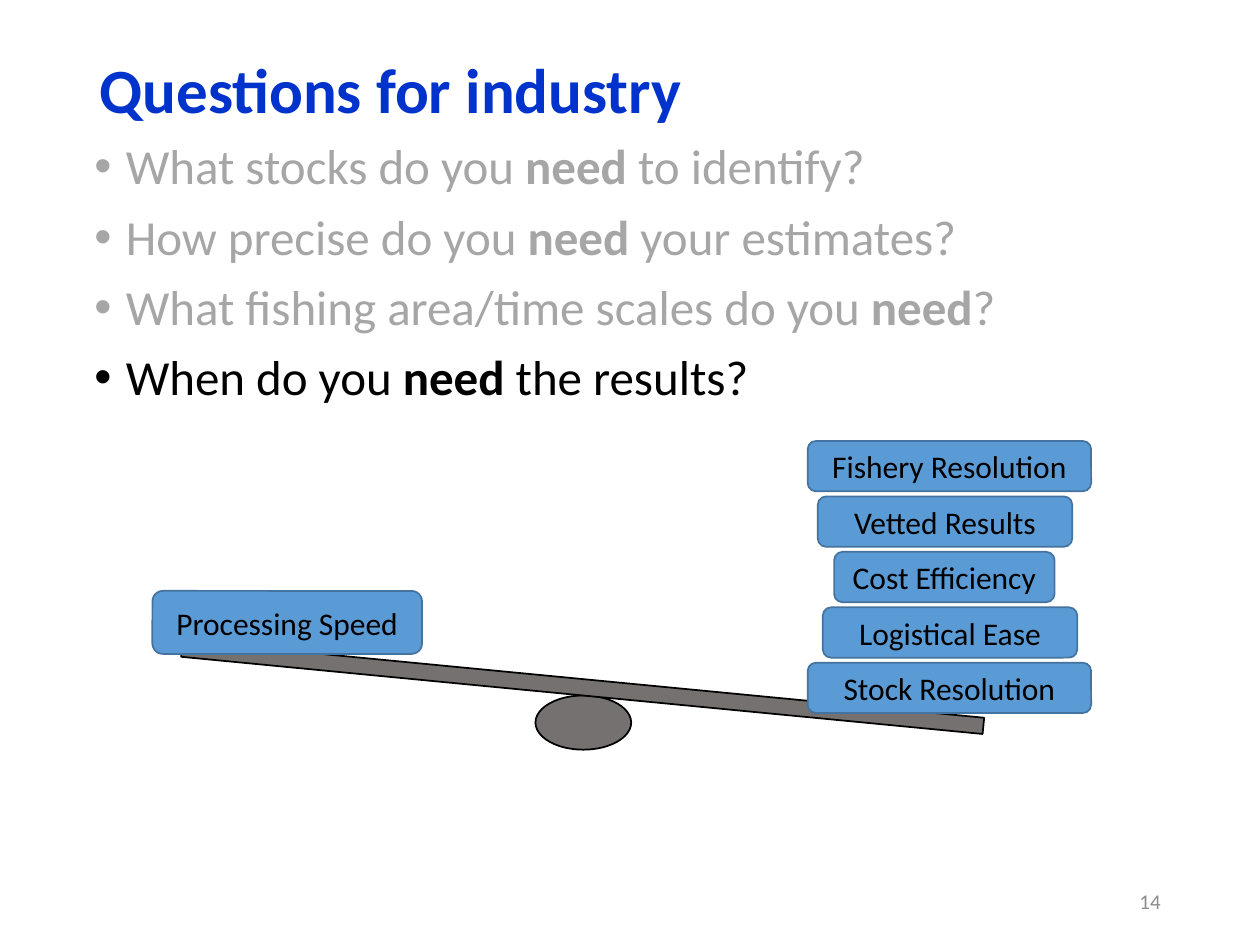
from lxml import etree
from pptx import Presentation
from pptx.dml.color import RGBColor
from pptx.enum.shapes import MSO_SHAPE
from pptx.enum.text import MSO_ANCHOR, PP_ALIGN
from pptx.oxml.ns import qn
from pptx.util import Inches, Pt

ROUNDED, OVAL, RECTANGLE = MSO_SHAPE.ROUNDED_RECTANGLE, MSO_SHAPE.OVAL, MSO_SHAPE.RECTANGLE
MIDDLE, TOP = MSO_ANCHOR.MIDDLE, MSO_ANCHOR.TOP
LEFT, CENTER, RIGHT = PP_ALIGN.LEFT, PP_ALIGN.CENTER, PP_ALIGN.RIGHT

FONT = "Calibri"
COLORS = {
    "title": "0033CC",
    "muted": "A6A6A6",
    "text": "000000",
    "number": "8C8C8C",
    "scale": "767171",
    "weight": "5B9BD5",
    "weight_line": "43739E",
}
QUESTIONS = [
    ("What stocks do you ", "need", " to identify?", "muted"),
    ("How precise do you ", "need ", "your estimates?", "muted"),
    ("What fishing area/time scales do you ", "need", "?", "muted"),
    ("When do you ", "need", " the results?", "text"),
]
STACK = [
    ("Fishery Resolution", 0, 2.25),
    ("Vetted Results", 0.08, 2.02),
    ("Cost Efficiency", 0.21, 1.75),
    ("Logistical Ease", 0.12, 2.02),
    ("Stock Resolution", 0, 2.25),
]


def color(name):
    return RGBColor.from_string(COLORS[name])


def format_run(run, size, color_name, bold=False):
    run.font.name = FONT
    run.font.size = Pt(size)
    run.font.bold = bold
    run.font.color.rgb = color(color_name)


def add_text_box(slide, box, anchor):
    text_frame = slide.shapes.add_textbox(*map(Inches, box)).text_frame
    text_frame.word_wrap = True
    text_frame.vertical_anchor = anchor
    return text_frame


def add_line(slide, box, text, size, color_name, alignment, bold=False):
    text_frame = add_text_box(slide, box, MIDDLE)
    text_frame.text = text
    paragraph = text_frame.paragraphs[0]
    paragraph.alignment = alignment
    paragraph.line_spacing = 0.9 if bold else 1
    format_run(paragraph.runs[0], size, color_name, bold)


def add_bullet(paragraph):
    properties = paragraph._p.get_or_add_pPr()
    properties.set("marL", str(Inches(0.25)))
    properties.set("indent", str(-Inches(0.25)))
    etree.SubElement(properties, qn("a:buFont")).set("typeface", "Arial")
    etree.SubElement(properties, qn("a:buChar")).set("char", "•")


def add_questions(slide, box):
    text_frame = add_text_box(slide, box, TOP)
    for index, (start, stress, end, color_name) in enumerate(QUESTIONS):
        paragraph = text_frame.add_paragraph() if index else text_frame.paragraphs[0]
        paragraph.line_spacing = 0.9
        paragraph.space_before = Pt(10)
        add_bullet(paragraph)
        for text in (start, stress, end):
            run = paragraph.add_run()
            run.text = text
            format_run(run, 28, color_name, text == stress)


def add_solid(slide, kind, box, fill, line):
    shape = slide.shapes.add_shape(kind, *map(Inches, box))
    shape.shadow.inherit = False
    shape.fill.solid()
    shape.fill.fore_color.rgb = color(fill)
    shape.line.color.rgb = color(line)
    shape.line.width = Pt(1)
    return shape


def add_weight(slide, box, text):
    shape = add_solid(slide, ROUNDED, box, "weight", "weight_line")
    text_frame = shape.text_frame
    text_frame.word_wrap = True
    text_frame.vertical_anchor = MIDDLE
    text_frame.text = text
    paragraph = text_frame.paragraphs[0]
    paragraph.alignment = CENTER
    format_run(paragraph.runs[0], 18, "text")


def add_seesaw(slide, left, top):
    add_solid(slide, OVAL, (left + 3.04, top + 2.02, 0.76, 0.43), "scale", "text")
    beam = add_solid(slide, RECTANGLE, (left + 0.22, top + 1.89, 6.39, 0.13), "scale", "text")
    beam.rotation = 5.5
    add_weight(slide, (left, top + 1.19, 2.14, 0.5), "Processing Speed")
    for row, (text, offset, width) in enumerate(STACK):
        add_weight(slide, (left + 5.2 + offset, top + row * 0.44, width, 0.4), text)


def main():
    presentation = Presentation()
    presentation.slide_width = Inches(10)
    presentation.slide_height = Inches(7.5)
    slide = presentation.slides.add_slide(presentation.slide_layouts[6])
    add_line(slide, (0.69, 0.01, 8.62, 1.45), "Questions for industry", 36, "title", LEFT, True)
    add_questions(slide, (0.65, 1.08, 8.95, 5.17))
    add_line(slide, (7.06, 6.95, 2.25, 0.4), "14", 12, "number", RIGHT)
    add_seesaw(slide, 1.21, 3.5)
    presentation.save("out.pptx")


if __name__ == "__main__":
    main()
